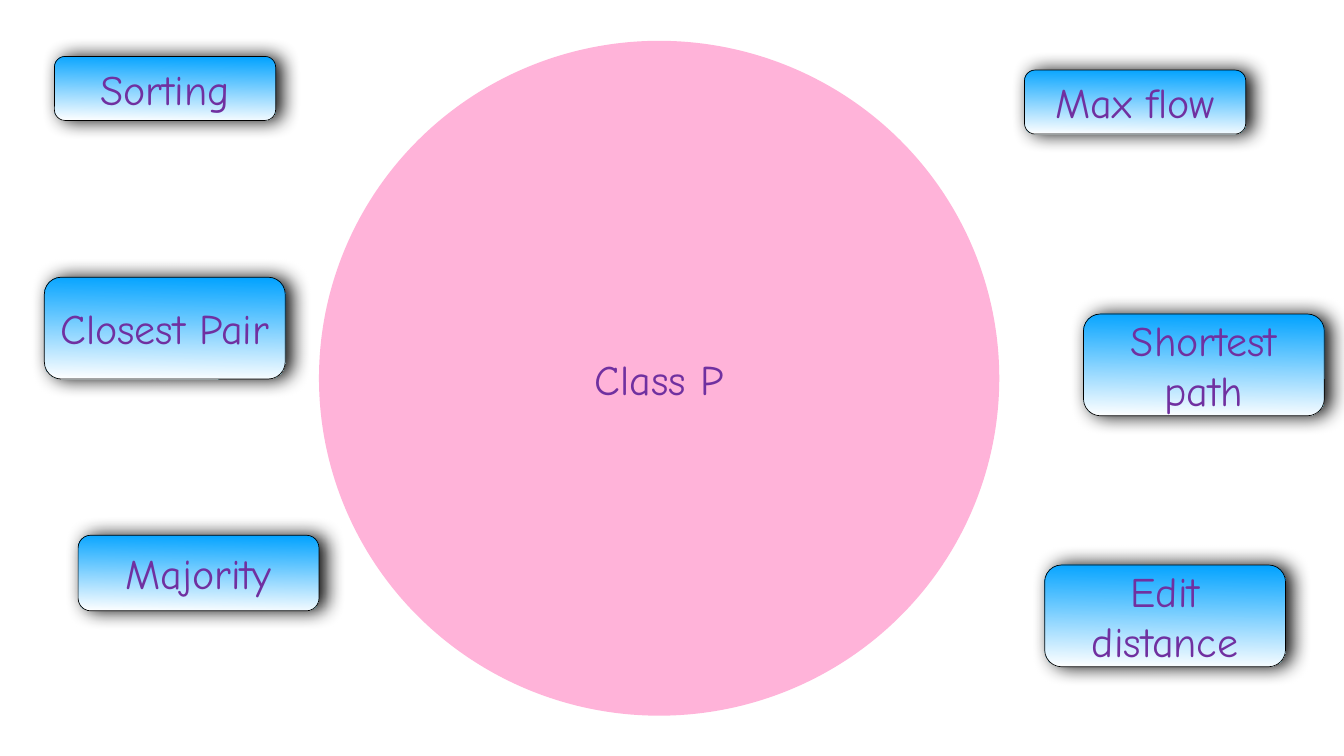
"""Build the slide that sets six problems around the class P circle."""
import lxml.etree
import pptx
import pptx.dml.color
import pptx.enum.shapes
import pptx.enum.text
import pptx.oxml.ns
import pptx.util

Inches = pptx.util.Inches
SHAPES = pptx.enum.shapes.MSO_SHAPE

CLASS_CIRCLE = ("Class P", 6.33, 0.81, 13.5, 13.39)
PROBLEMS = [
    ("Sorting", 1.08, 1.12, 4.39, 1.27),
    ("Max flow", 20.33, 1.39, 4.39, 1.27),
    ("Shortest path", 21.5, 6.23, 4.78, 2.02),
    ("Edit distance", 20.73, 11.21, 4.78, 2.02),
    ("Majority", 1.55, 10.62, 4.78, 1.5),
    ("Closest Pair", 0.88, 5.5, 4.78, 2.02),
]
PINK, BLUE, WHITE, BLACK, PURPLE = "FFB3D9", "00A2FF", "FFFFFF", "000000", "7030A0"


def color(value):
    return pptx.dml.color.RGBColor.from_string(value)


def add_labelled(slide, kind, label, *box):
    shape = slide.shapes.add_shape(kind, *map(Inches, box))
    shape.shadow.inherit = False
    frame = shape.text_frame
    frame.word_wrap = True
    frame.vertical_anchor = pptx.enum.text.MSO_ANCHOR.MIDDLE
    frame.margin_left = frame.margin_right = Inches(0.06)
    frame.margin_top = frame.margin_bottom = Inches(0.06)
    paragraph = frame.paragraphs[0]
    paragraph.alignment = pptx.enum.text.PP_ALIGN.CENTER
    run = paragraph.add_run()
    run.text = label
    run.font.name = "Comic Neue"
    run.font.size = pptx.util.Pt(60)
    run.font.color.rgb = color(PURPLE)
    return shape


def add_shadow(shape):
    qn = pptx.oxml.ns.qn
    effects = shape.element.spPr.find(qn("a:effectLst"))
    shadow = lxml.etree.SubElement(
        effects, qn("a:outerShdw"), blurRad=str(pptx.util.Pt(28)),
        dist=str(pptx.util.Pt(9)), dir="0", algn="ctr", rotWithShape="0")
    tint = lxml.etree.SubElement(shadow, qn("a:srgbClr"), val=BLACK)
    lxml.etree.SubElement(tint, qn("a:alpha"), val="97000")


def add_problem(slide, problem):
    card = add_labelled(slide, SHAPES.ROUNDED_RECTANGLE, *problem)
    card.fill.gradient()
    card.fill.gradient_angle = 269
    for stop, position, shade in zip(card.fill.gradient_stops, (0, 1), (BLUE, WHITE)):
        stop.position = position
        stop.color.rgb = color(shade)
    card.line.color.rgb = color(BLACK)
    card.line.width = pptx.util.Pt(1)
    add_shadow(card)


def main():
    deck = pptx.Presentation()
    deck.slide_width, deck.slide_height = Inches(26.67), Inches(15)
    slide = deck.slides.add_slide(deck.slide_layouts[6])
    circle = add_labelled(slide, SHAPES.OVAL, *CLASS_CIRCLE)
    circle.fill.solid()
    circle.fill.fore_color.rgb = color(PINK)
    circle.line.fill.background()
    for problem in PROBLEMS:
        add_problem(slide, problem)
    deck.save("out.pptx")


if __name__ == "__main__":
    main()
